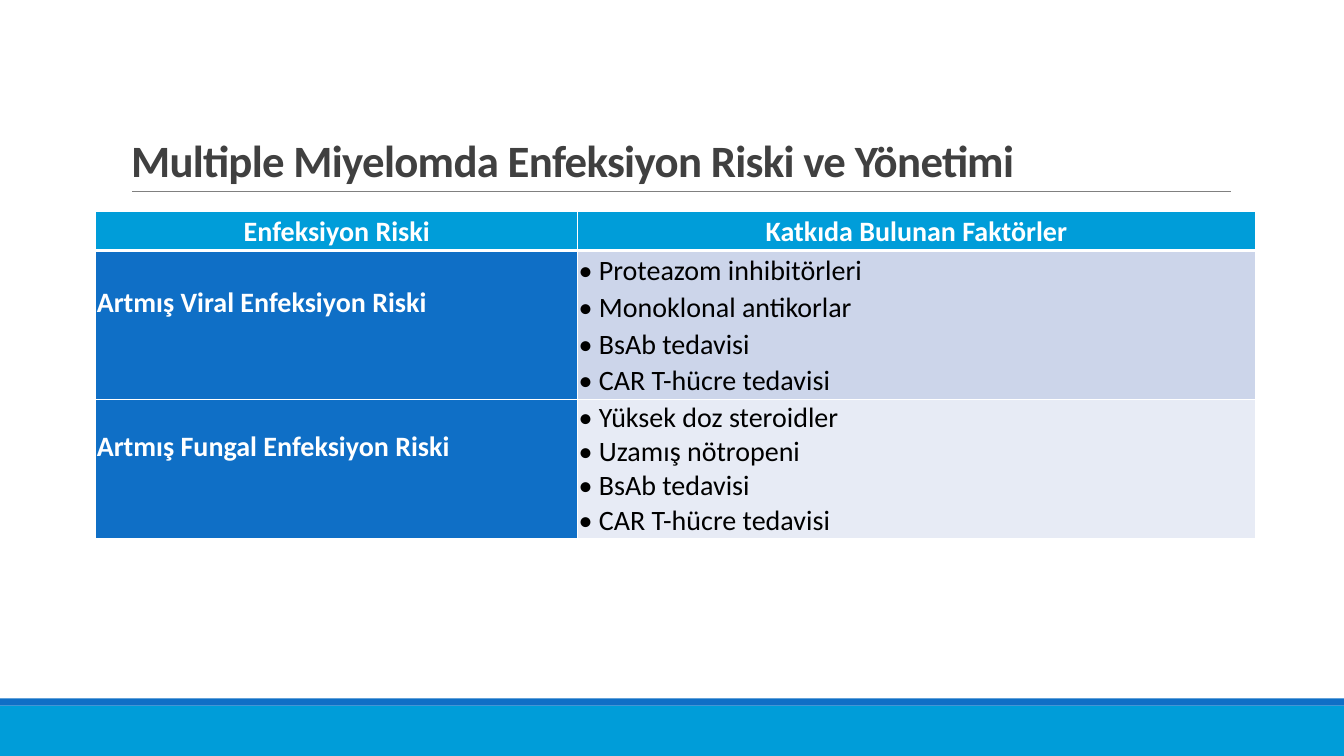
from dataclasses import dataclass

from lxml.etree import SubElement as Sub
from pptx import Presentation
from pptx.dml.color import RGBColor as RGB
from pptx.enum.shapes import MSO_CONNECTOR as Link, MSO_SHAPE as Shape
from pptx.enum.text import MSO_ANCHOR as Anchor, MSO_AUTO_SIZE as Fit, PP_ALIGN as Align
from pptx.oxml.ns import qn
from pptx.util import Inches, Pt


@dataclass(frozen=True)
class Theme:
    """Colours, type sizes and font of the slide."""
    font: str = "Calibri"
    head: int = 32
    body: int = 20
    sky: str = "009DD9"
    blue: str = "0F6FC6"
    ink: str = "404040"
    rule: str = "808080"
    white: str = "FFFFFF"
    black: str = "000000"
    bands: tuple = ("CCD5EA", "E7EBF5")


THEME = Theme()
WIDTH, HEIGHT = 13.33, 7.5
HEADS = ["Enfeksiyon Riski", "Katkıda Bulunan Faktörler"]
RISKS = [
    ("Artmış Viral Enfeksiyon Riski",
     ["Proteazom inhibitörleri", "Monoklonal antikorlar",
      "BsAb tedavisi", "CAR T-hücre tedavisi"], 1.07),
    ("Artmış Fungal Enfeksiyon Riski",
     ["Yüksek doz steroidler", "Uzamış nötropeni",
      "BsAb tedavisi", "CAR T-hücre tedavisi"], 1.0),
]


def write(frame, lines, size=THEME.body, color=THEME.white, bold=True,
          align=Align.LEFT, spacing=1.07, track=None, bullet=False):
    """Fill a text frame with one formatted paragraph per line."""
    for i, line in enumerate(lines):
        par = frame.paragraphs[0] if i == 0 else frame.add_paragraph()
        par.alignment, par.line_spacing = align, spacing
        par.space_before = par.space_after = Pt(0)
        if bullet:
            props = par._p.get_or_add_pPr()
            props.set("marL", str(Inches(0.2)))
            props.set("indent", str(-Inches(0.2)))
            Sub(props, qn("a:buFont"), typeface=THEME.font)
            Sub(props, qn("a:buChar"), char="•")
        run = par.add_run()
        run.text = line
        font = run.font
        font.name, font.size, font.bold = THEME.font, Pt(size), bold
        font.color.rgb = RGB.from_string(color)
        if track is not None:
            run._r.get_or_add_rPr().set("spc", str(round(track * 100)))


def edge(cell, bottom=1):
    """Draw white borders around a table cell."""
    props = cell._tc.get_or_add_tcPr()
    for side, width in zip("LRTB", (1, 1, 1, bottom)):
        line = Sub(props, qn(f"a:ln{side}"), w=str(Pt(width)))
        fill = Sub(line, qn("a:solidFill"))
        Sub(fill, qn("a:srgbClr"), val=THEME.white)


def dress(cell, fill, bottom=1, pad=0.01):
    """Set the borders, fill and margins of a cell and return its text frame."""
    edge(cell, bottom)
    cell.fill.solid()
    cell.fill.fore_color.rgb = RGB.from_string(fill)
    cell.vertical_anchor = Anchor.MIDDLE
    cell.margin_left = cell.margin_right = cell.margin_top = Inches(0.01)
    cell.margin_bottom = Inches(pad)
    return cell.text_frame


def footer(slide, left, top, width, height):
    """Place the two coloured strips at the foot of the slide."""
    thin = 0.07
    for y, tall, color in ((top + thin, height - thin, THEME.sky),
                           (top, thin, THEME.blue)):
        strip = slide.shapes.add_shape(
            Shape.RECTANGLE, Inches(left), Inches(y), Inches(width), Inches(tall))
        strip.shadow.inherit = False
        strip.fill.solid()
        strip.fill.fore_color.rgb = RGB.from_string(color)
        strip.line.fill.background()


def header(slide, left, top, width, height):
    """Place the title and the thin rule under it."""
    base = Inches(top + height)
    rule = slide.shapes.add_connector(
        Link.STRAIGHT, Inches(left + 0.11), base, Inches(left + width + 0.01), base)
    rule.line.color.rgb = RGB.from_string(THEME.rule)
    rule.line.width = Pt(0.5)
    Sub(rule._element.spPr, qn("a:effectLst"))
    title = slide.shapes.title
    title.left, title.top = Inches(left), Inches(top)
    title.width, title.height = Inches(width), Inches(height)
    frame = title.text_frame
    frame.word_wrap, frame.auto_size = True, Fit.NONE
    frame.vertical_anchor = Anchor.BOTTOM
    write(frame, ["Multiple Miyelomda Enfeksiyon Riski ve Yönetimi"],
          size=THEME.head, color=THEME.ink, spacing=0.85, track=-0.5)


def grid(slide, left, top, width, height):
    """Place the table of infection risks and their factors."""
    table = slide.shapes.add_table(
        len(RISKS) + 1, 2, Inches(left), Inches(top),
        Inches(width), Inches(height)).table
    table.horz_banding = False
    first = 4.78
    for col, wide in zip(table.columns, (first, width - first)):
        col.width = Inches(wide)
    for row, tall in zip(table.rows, (0.38, 1.48, height - 1.86)):
        row.height = Inches(tall)
    for i, head in enumerate(HEADS):
        frame = dress(table.cell(0, i), THEME.sky, bottom=3)
        write(frame, [head], align=Align.CENTER)
    for i, (risk, causes, spacing) in enumerate(RISKS):
        frame = dress(table.cell(i + 1, 0), THEME.blue, pad=0.48)
        write(frame, [risk])
        frame = dress(table.cell(i + 1, 1), THEME.bands[i])
        write(frame, causes, color=THEME.black, bold=False,
              spacing=spacing, bullet=True)


def main():
    """Build and save the slide."""
    deck = Presentation()
    deck.slide_width, deck.slide_height = Inches(WIDTH), Inches(HEIGHT)
    slide = deck.slides.add_slide(deck.slide_layouts[5])
    footer(slide, 0, 6.93, WIDTH, 0.57)
    header(slide, 1.2, 0.31, 11, 1.59)
    grid(slide, 0.95, 2.1, 11.5, 3.24)
    deck.save("out.pptx")


if __name__ == "__main__":
    main()
